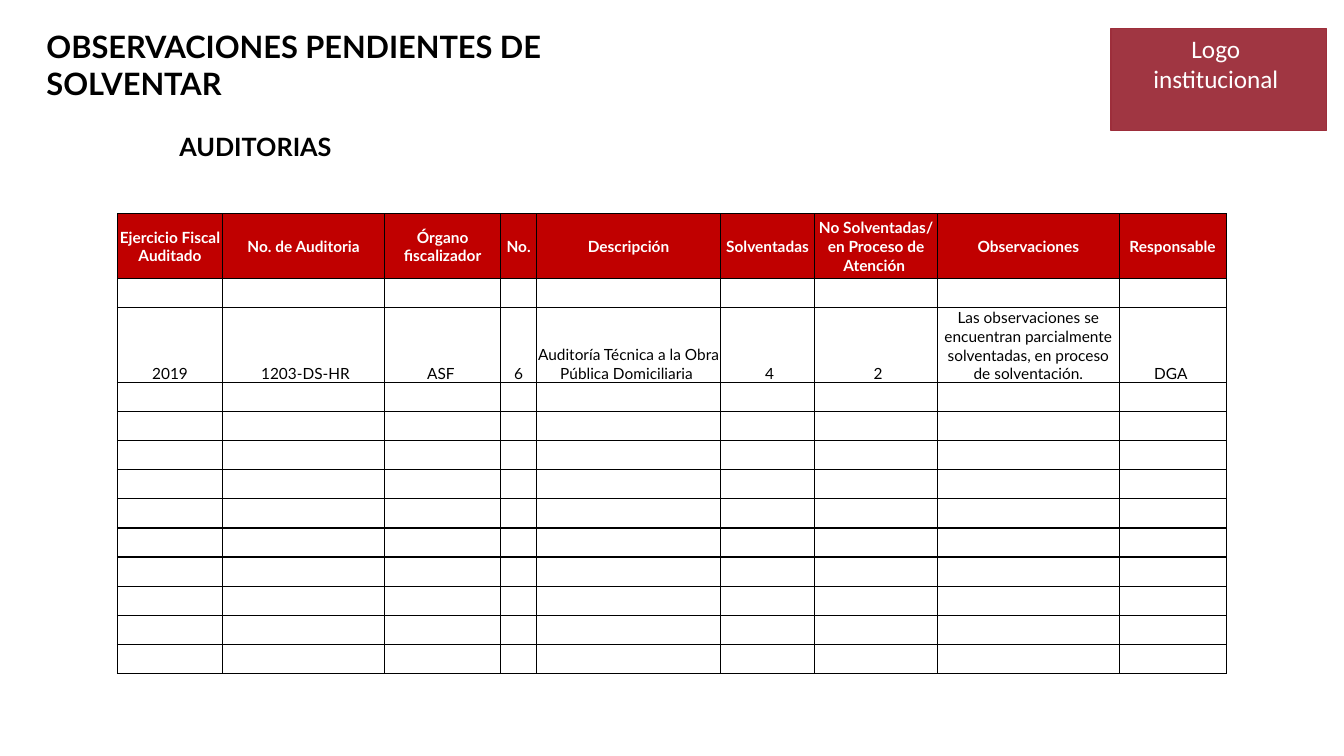
from lxml import etree
from pptx import Presentation
from pptx import util as u
from pptx.dml.color import RGBColor
from pptx.enum import shapes, text
from pptx.oxml import ns

BLACK = RGBColor(0x00, 0x00, 0x00)
WHITE = RGBColor(0xFF, 0xFF, 0xFF)
RED = RGBColor(0xC0, 0x00, 0x00)
WINE = RGBColor(0x9D, 0x2E, 0x3B)

COLUMN_WIDTHS = [75, 115.8, 82.9, 25.7, 131.4, 67.2, 87.9, 129.6, 76.5]
HEADER_HEIGHT, AUDIT_HEIGHT, EMPTY_HEIGHT = 46.4, 53.5, 20.8
ROW_COUNT, AUDIT_ROW = 13, 2
HEADERS = ["Ejercicio Fiscal Auditado", "No. de Auditoria", "Órgano fiscalizador",
           "No.", "Descripción", "Solventadas",
           "No Solventadas/ en Proceso de Atención ", "Observaciones", "Responsable"]
AUDIT = ["2019", " 1203-DS-HR", "ASF ", "6",
         "Auditoría Técnica a la Obra\nPública Domiciliaria ", " 4", " 2",
         "Las observaciones se encuentran parcialmente solventadas, "
         "en proceso de solventación.", "DGA "]


class Deck:
    """Holds the text style and the current slide."""

    font, cell_size = "Lato", 11

    def __init__(self, prs):
        self.s = prs.slides.add_slide(prs.slide_layouts[5])

    def add_text(self, tf, content, size, color, bold=False, align=None, font=None):
        for i, line in enumerate(content.split("\n")):
            p = tf.paragraphs[0] if i == 0 else tf.add_paragraph()
            p.alignment = align
            r = p.add_run()
            r.text = line
            r.font.name = font or self.font
            r.font.size = u.Pt(size)
            r.font.bold = bold
            r.font.color.rgb = color

    def heading(self, sp, content, size):
        tf = sp.text_frame
        tf.word_wrap = True
        tf.vertical_anchor = text.MSO_ANCHOR.TOP
        tf.auto_size = text.MSO_AUTO_SIZE.SHAPE_TO_FIT_TEXT
        self.add_text(tf, content, size, BLACK, True, text.PP_ALIGN.LEFT)
        tf.paragraphs[0].line_spacing = 1.0
        tf.paragraphs[0].space_before = u.Pt(0)

    def title(self, content, x, y, w, h, size):
        sp = self.s.shapes.title
        sp.left, sp.top, sp.width, sp.height = map(u.Pt, (x, y, w, h))
        self.heading(sp, content, size)

    def subtitle(self, content, x, y, w, h, size):
        sp = self.s.shapes.add_textbox(*map(u.Pt, (x, y, w, h)))
        self.heading(sp, content, size)

    def block(self, content, x, y, w, h, color, opacity):
        sp = self.s.shapes.add_shape(shapes.MSO_SHAPE.RECTANGLE,
                                     *map(u.Pt, (x, y, w, h)))
        sp.shadow.inherit = False
        sp.fill.solid()
        sp.fill.fore_color.rgb = color
        tint = sp.element.spPr.find(ns.qn("a:solidFill")).find(ns.qn("a:srgbClr"))
        etree.SubElement(tint, ns.qn("a:alpha"), val=str(opacity * 1000))
        sp.line.color.rgb = color
        sp.line.width = u.Pt(1)
        tf = sp.text_frame
        tf.word_wrap = True
        tf.vertical_anchor = text.MSO_ANCHOR.TOP
        self.add_text(tf, content, 18, WHITE, align=text.PP_ALIGN.CENTER, font="Calibri")

    def table(self, x, y, widths, heights):
        frame = self.s.shapes.add_table(len(heights), len(widths), u.Pt(x), u.Pt(y),
                                        u.Pt(sum(widths)), u.Pt(sum(heights)))
        table = frame.table
        table.first_row = table.horz_banding = False
        for column, width in zip(table.columns, widths):
            column.width = u.Pt(width)
        for row, height in zip(table.rows, heights):
            row.height = u.Pt(height)
        return table

    def cell(self, cell, content, header):
        cell.margin_left = cell.margin_right = cell.margin_top = u.Pt(0.72)
        cell.margin_bottom = 0
        cell.vertical_anchor = text.MSO_ANCHOR.MIDDLE if header else text.MSO_ANCHOR.BOTTOM
        cell.fill.solid()
        cell.fill.fore_color.rgb = RED if header else WHITE
        self.borders(cell, 0.5 if header else 1)
        if content:
            self.add_text(cell.text_frame, content, self.cell_size,
                          WHITE if header else BLACK, header, text.PP_ALIGN.CENTER)
        else:
            # Keeps an empty row from growing to the default text size
            etree.SubElement(cell.text_frame.paragraphs[0]._p, ns.qn("a:endParaRPr"),
                             sz=str(self.cell_size * 100))

    def borders(self, cell, width):
        tcPr = cell._tc.get_or_add_tcPr()
        for i, side in enumerate(("lnL", "lnR", "lnT", "lnB")):
            points = 1 if side == "lnB" else width
            ln = etree.Element(ns.qn("a:" + side), w=str(int(u.Pt(points))))
            fill = etree.SubElement(ln, ns.qn("a:solidFill"))
            etree.SubElement(fill, ns.qn("a:srgbClr"), val=str(BLACK))
            tcPr.insert(i, ln)


def main():
    prs = Presentation()
    prs.slide_width, prs.slide_height = u.Pt(960), u.Pt(540)
    deck = Deck(prs)

    # Headings
    deck.title("OBSERVACIONES PENDIENTES DE SOLVENTAR", 26, 16.5, 480, 34, 22)
    deck.subtitle("AUDITORIAS", 121, 90, 480, 29, 18)

    # Audit table
    heights = [EMPTY_HEIGHT] * ROW_COUNT
    heights[0], heights[AUDIT_ROW] = HEADER_HEIGHT, AUDIT_HEIGHT
    contents = {0: HEADERS, AUDIT_ROW: AUDIT}
    table = deck.table(84, 152.5, COLUMN_WIDTHS, heights)
    for i in range(ROW_COUNT):
        for j, content in enumerate(contents.get(i, [""] * len(HEADERS))):
            deck.cell(table.cell(i, j), content, header=i == 0)

    # Logo block
    deck.block("Logo \ninstitucional ", 793.5, 20.2, 154, 73, WINE, 96)

    prs.save("out.pptx")


if __name__ == "__main__":
    main()
